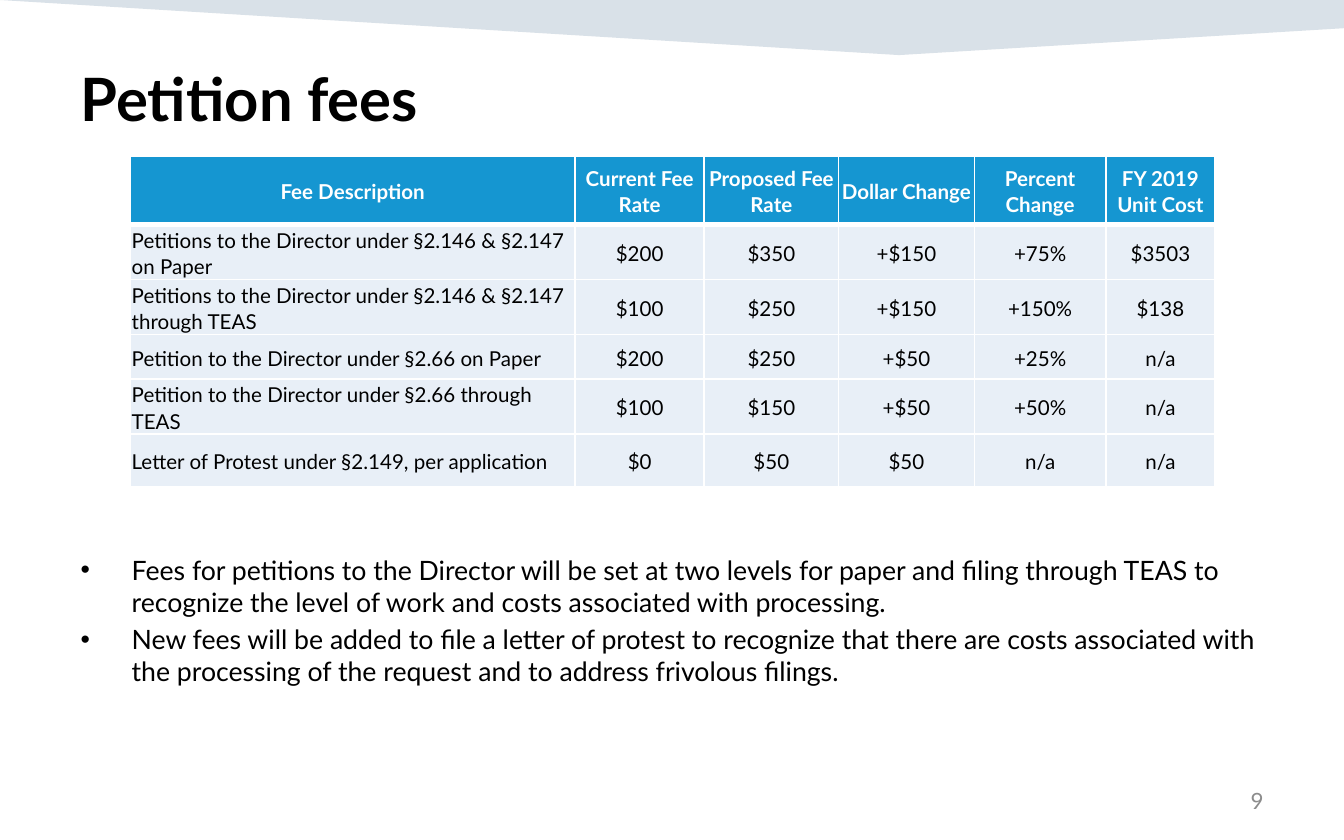
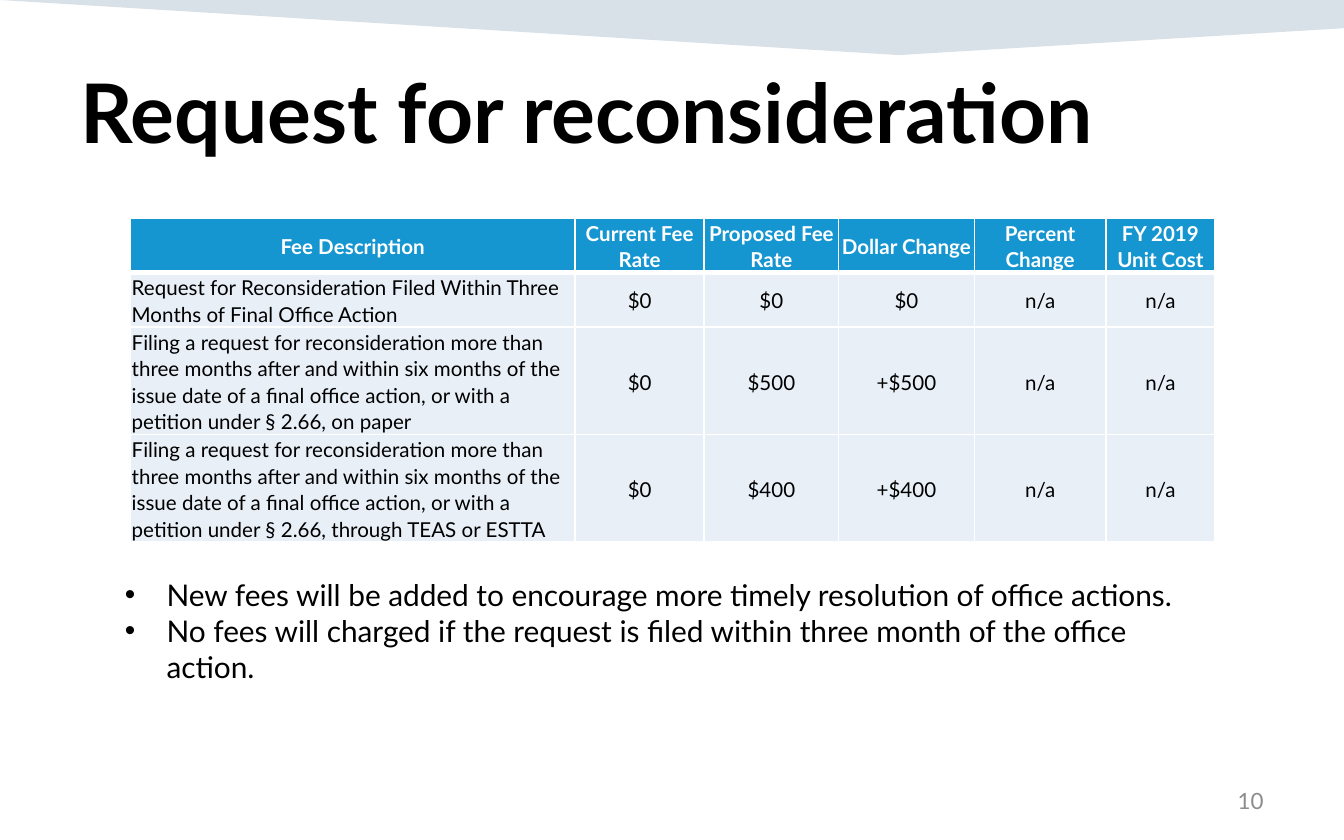
from dataclasses import dataclass

from lxml import etree
from pptx import Presentation
from pptx.dml.color import RGBColor
from pptx.enum.text import MSO_ANCHOR as ANCHOR, MSO_AUTO_SIZE as AUTOSIZE, PP_ALIGN as ALIGN
from pptx.oxml import parse_xml
from pptx.oxml.ns import nsdecls, qn
from pptx.util import Inches, Pt


@dataclass(frozen=True)
class Theme:
    font: str = "Lato"
    text: str = "000000"
    white: str = "FFFFFF"
    band: str = "003865"
    header: str = "1596D1"
    row: str = "E8EFF7"
    number: str = "8C8C8C"
    table_size: float = 11
    number_size: float = 12


T = Theme()


def write(p, text, size, color=T.text, bold=False, align=ALIGN.LEFT,
          before=0, after=0, spacing=1.0, indent=None):
    if indent:
        pPr = p._p.get_or_add_pPr()
        pPr.set("marL", str(Inches(indent)))
        pPr.set("indent", str(-Inches(indent)))
        etree.SubElement(pPr, qn("a:buFont")).set("typeface", "Arial")
        etree.SubElement(pPr, qn("a:buChar")).set("char", "•")
    p.alignment = align
    p.space_before, p.space_after = Pt(before), Pt(after)
    p.line_spacing = spacing
    r = p.add_run()
    r.text = text
    r.font.name, r.font.size, r.font.bold = T.font, Pt(size), bold
    r.font.color.rgb = RGBColor.from_string(color)


def set_border(cell, sides):
    """Draw white cell borders; sides maps L, R, T, B to widths in points."""
    tcPr = cell._tc.get_or_add_tcPr()
    for i, (side, width) in enumerate(sides.items()):
        tcPr.insert(i, parse_xml(
            f'<a:ln{side} {nsdecls("a")} w="{Pt(width)}"><a:solidFill>'
            f'<a:srgbClr val="{T.white}"/></a:solidFill></a:ln{side}>'))


# Content
columns = ["Fee Description", "Current Fee Rate", "Proposed Fee Rate",
           "Dollar Change", "Percent Change", "FY 2019 Unit Cost"]
col_widths = [3.31, 0.96, 1, 1.01, 0.98, 0.81]
late_request = ("Filing a request for reconsideration more than three months after and within "
                "six months of the issue date of a final office action, or with a petition "
                "under § 2.66, ")

pages = [
    dict(
        number=9, title="Petition fees", title_size=32,
        table_top=1.16, row_heights=[0.51, 0.41, 0.41, 0.33, 0.41, 0.39],
        rows=[
            ["Petitions to the Director under §2.146 & §2.147 on Paper",
             "$200", "$350", "+$150", "+75%", "$3503"],
            ["Petitions to the Director under §2.146 & §2.147 through TEAS",
             "$100", "$250", "+$150", "+150%", "$138"],
            ["Petition to the Director under §2.66 on Paper",
             "$200", "$250", "+$50", "+25%", "n/a"],
            ["Petition to the Director under §2.66 through TEAS",
             "$100", "$150", "+$50", "+50%", "n/a"],
            ["Letter of Protest under §2.149, per application",
             "$0", "$50", "$50", "n/a", "n/a"],
        ],
        list_box=(0.5, 3.84, 9, 1.4), list_inset=0.28, list_size=14.3, gap=2.86, indent=0.38,
        bullets=[
            "Fees for petitions to the Director will be set at two levels for paper and filing "
            "through TEAS to recognize the level of work and costs associated with processing.",
            "New fees will be added to file a letter of protest to recognize that there are costs "
            "associated with the processing of the request and to address frivolous filings.",
        ],
    ),
    dict(
        number=10, title="Request for reconsideration", title_size=44,
        table_top=1.62, row_heights=[0.4, 0.4, 0.8, 0.8],
        rows=[
            ["Request for Reconsideration Filed Within Three Months of Final Office Action",
             "$0", "$0", "$0", "n/a", "n/a"],
            [late_request + "on paper", "$0", "$500", "+$500", "n/a", "n/a"],
            [late_request + "through TEAS or ESTTA", "$0", "$400", "+$400", "n/a", "n/a"],
        ],
        list_box=(0.83, 4.24, 8.15, 0.91), list_inset=0.05, list_size=16, gap=0, indent=0.31,
        bullets=[
            "New fees will be added to encourage more timely resolution of office actions.",
            "No fees will charged if the request is filed within three month of the office action.",
        ],
    ),
]

prs = Presentation()
prs.slide_width, prs.slide_height = Inches(10), Inches(6.25)
layout = prs.slide_layouts[1]

for page in pages:
    s = prs.slides.add_slide(layout)

    # Top band, drawn once and moved to the shared layout
    if page is pages[0]:
        outline = s.shapes.build_freeform(0, 0, scale=Inches(1) / 100)
        outline.add_line_segments([(1000, 0), (1000, 21), (669, 41)], close=True)
        band = outline.convert_to_shape()
        band.shadow.inherit = False
        band.line.fill.background()
        band.fill.solid()
        band.fill.fore_color.rgb = RGBColor.from_string(T.band)
        clr = band._element.spPr.find(".//" + qn("a:srgbClr"))
        etree.SubElement(clr, qn("a:alpha")).set("val", "15000")
        layout.shapes.element.insert(2, band._element)

    # Title and bullet list
    title, body = s.shapes.title, s.placeholders[1]
    for sp, box in ((title, (0.5, 0.41, 9, 0.97)), (body, page["list_box"])):
        sp.left, sp.top, sp.width, sp.height = map(Inches, box)
        tf = sp.text_frame
        tf.word_wrap, tf.auto_size = True, AUTOSIZE.NONE
        tf.vertical_anchor = ANCHOR.TOP
    write(title.text_frame.paragraphs[0], page["title"], page["title_size"], bold=True)
    tf = body.text_frame
    tf.margin_top = Inches(page["list_inset"])
    for i, text in enumerate(page["bullets"]):
        p = tf.add_paragraph() if i else tf.paragraphs[0]
        write(p, text, page["list_size"], before=page["gap"] if i else 0, indent=page["indent"])

    # Fee table
    rows = [columns] + page["rows"]
    heights = page["row_heights"]
    table = s.shapes.add_table(len(rows), len(columns), Inches(0.97), Inches(page["table_top"]),
                               Inches(sum(col_widths)), Inches(sum(heights))).table
    for col, width in zip(table.columns, col_widths):
        col.width = Inches(width)
    for i, (row, height) in enumerate(zip(rows, heights)):
        table.rows[i].height = Inches(height)
        head = i == 0
        for j, text in enumerate(row):
            cell = table.cell(i, j)
            cell.margin_left = cell.margin_top = cell.margin_right = Inches(0.01)
            cell.margin_bottom = 0
            cell.vertical_anchor = ANCHOR.MIDDLE
            cell.fill.solid()
            cell.fill.fore_color.rgb = RGBColor.from_string(T.header if head else T.row)
            set_border(cell, dict(L=1, R=1, T=3 if i == 1 else 1, B=3 if head else 1))
            write(cell.text_frame.paragraphs[0], text, T.table_size,
                  color=T.white if head else T.text, bold=head,
                  align=ALIGN.CENTER if head or j else ALIGN.LEFT, after=8, spacing=1.07)

    # Slide number
    tf = s.shapes.add_textbox(Inches(7.17), Inches(5.79), Inches(2.33), Inches(0.33)).text_frame
    tf.word_wrap, tf.vertical_anchor = True, ANCHOR.MIDDLE
    write(tf.paragraphs[0], str(page["number"]), T.number_size, color=T.number, align=ALIGN.RIGHT)

prs.save("out.pptx")
